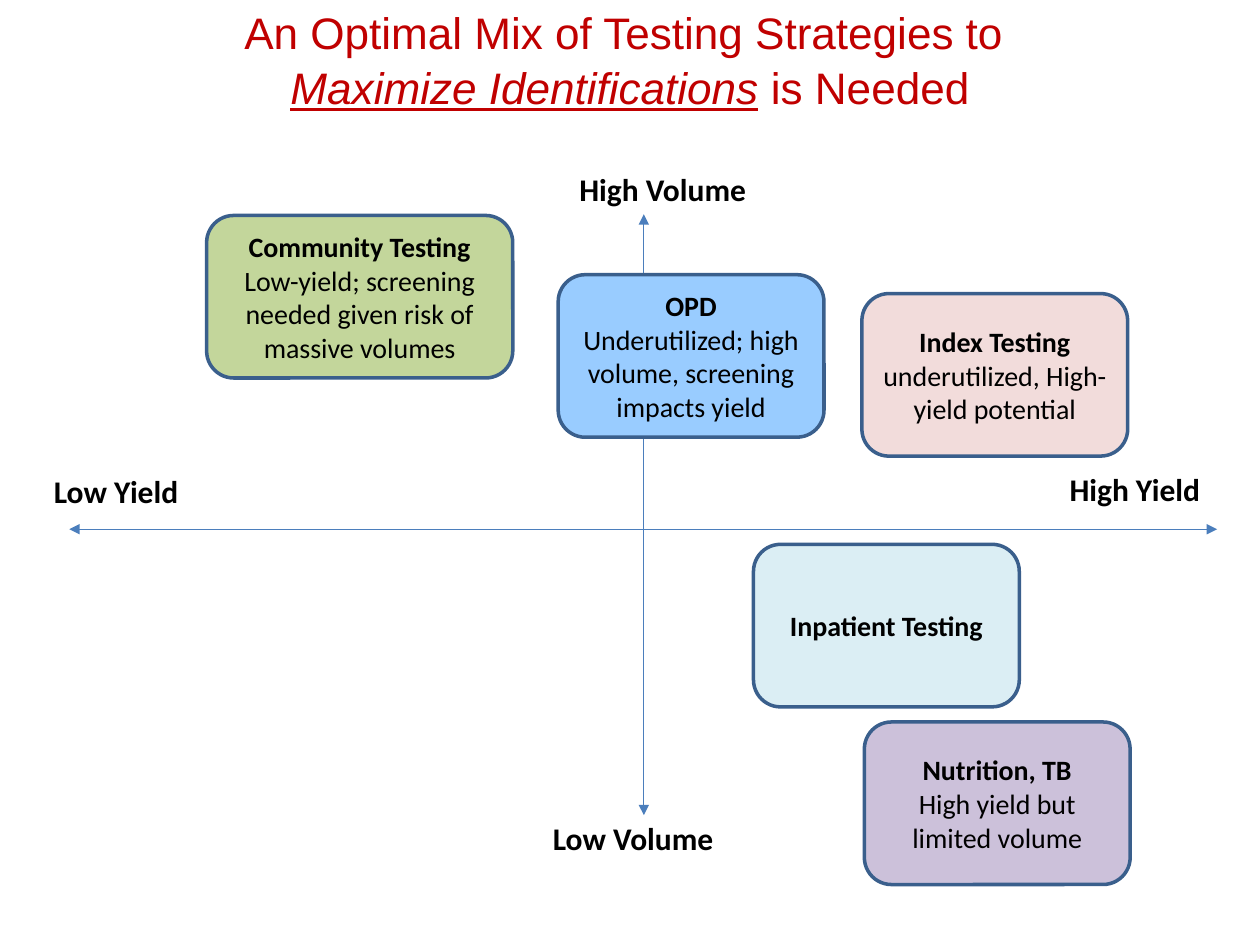
from pptx import Presentation
from pptx.dml.color import RGBColor
from pptx.enum.shapes import MSO_CONNECTOR, MSO_SHAPE
from pptx.enum.text import MSO_ANCHOR, PP_ALIGN
from pptx.oxml.ns import qn
from pptx.util import Inches, Pt
from lxml import etree

LINE, ROUNDED = MSO_CONNECTOR.STRAIGHT, MSO_SHAPE.ROUNDED_RECTANGLE
MIDDLE, CENTER = MSO_ANCHOR.MIDDLE, PP_ALIGN.CENTER

TITLE = [  # text, emphasised
    ("An Optimal Mix of Testing Strategies to \v", False),
    ("Maximize Identifications", True),
    (" is Needed", False),
]
AXES = [(0.55, 4.2, 9.66, 4.2), (5.11, 1.7, 5.11, 6.47)]
AXIS_LABELS = [
    ("Low Yield", 0.33, 3.7),
    ("High Yield", 8.39, 3.68),
    ("High Volume", 4.5, 1.3),
    ("Low Volume", 4.29, 6.45),
]
LABEL_W, LABEL_H = 1.63, 0.4
STRATEGIES = [  # heading, detail, fill, left, top, width
    ("Community Testing", "Low-yield; screening needed given risk of massive volumes",
     "C3D69B", 1.64, 1.71, 2.43),
    ("OPD", "Underutilized; high volume, screening impacts yield",
     "99CCFF", 4.43, 2.18, 2.11),
    ("Index Testing", "underutilized, High-yield potential",
     "F2DCDB", 6.84, 2.33, 2.11),
    ("Nutrition, TB", "High yield but limited volume",
     "CCC1DA", 6.86, 5.73, 2.11),
    ("Inpatient Testing", "", "DBEEF4", 5.98, 4.32, 2.11),
]
BOX_H = 1.29


def rgb(color):
    return RGBColor.from_string(color)


def set_font(font, size, name="Calibri", color="000000", bold=False):
    font.size, font.name, font.bold = Pt(size), name, bold
    font.color.rgb = rgb(color)


def add_text_box(slide, *box):
    tf = slide.shapes.add_textbox(*map(Inches, box)).text_frame
    tf.word_wrap = True
    return tf


def add_title(slide):
    tf = add_text_box(slide, 0.5, 0, 9, 0.92)
    tf.vertical_anchor = MIDDLE
    p = tf.paragraphs[0]
    p.alignment, p.line_spacing = CENTER, 1.05
    set_font(p.font, 25.2, "Arial", "C00000")
    for text, emphasised in TITLE:
        if text.endswith("\v"):
            p.add_run().text = text[:-1]
            p.add_line_break()
            continue
        r = p.add_run()
        r.text = text
        if emphasised:
            r.font.italic = r.font.underline = True


def add_axis(slide, *ends):
    """Draw a line with an arrowhead at both ends."""
    line = slide.shapes.add_connector(LINE, *map(Inches, ends))
    line.line.color.rgb, line.line.width = rgb("4B7EBC"), Pt(0.75)
    ln = line.line._get_or_add_ln()
    for end in ("a:headEnd", "a:tailEnd"):
        etree.SubElement(ln, qn(end), type="triangle")
    etree.SubElement(line._element.spPr, qn("a:effectLst"))


def add_strategy(slide, heading, detail, fill, left, top, width):
    sp = slide.shapes.add_shape(ROUNDED, *map(Inches, (left, top, width, BOX_H)))
    sp.shadow.inherit = False
    sp.fill.solid()
    sp.fill.fore_color.rgb = rgb(fill)
    sp.line.color.rgb, sp.line.width = rgb("3A5F8C"), Pt(2)
    tf = sp.text_frame
    tf.word_wrap, tf.vertical_anchor = True, MIDDLE
    tf.text = "\n".join(filter(None, (heading, detail)))
    for i, p in enumerate(tf.paragraphs):
        p.alignment = CENTER
        set_font(p.font, 16, bold=i == 0)


prs = Presentation()
prs.slide_width, prs.slide_height = Inches(10), Inches(7.5)
slide = prs.slides.add_slide(prs.slide_layouts[6])
add_title(slide)
for axis in AXES:
    add_axis(slide, *axis)
for text, left, top in AXIS_LABELS:
    p = add_text_box(slide, left, top, LABEL_W, LABEL_H).paragraphs[0]
    p.text = text
    set_font(p.font, 18, bold=True)
for strategy in STRATEGIES:
    add_strategy(slide, *strategy)
prs.save("out.pptx")
